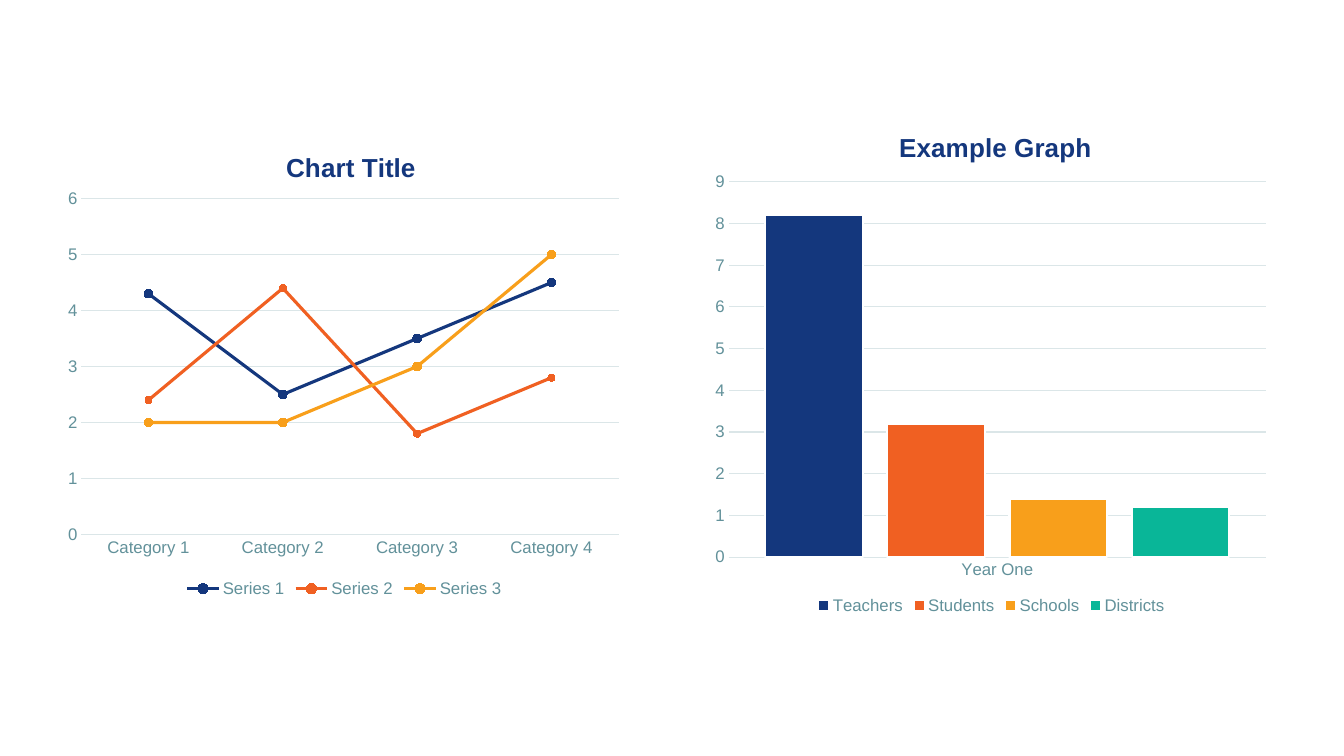
from dataclasses import dataclass

from lxml import etree
from pptx import Presentation
from pptx.chart.data import CategoryChartData
from pptx.dml.color import RGBColor
from pptx.enum.chart import (XL_CHART_TYPE, XL_LEGEND_POSITION,
                             XL_MARKER_STYLE, XL_TICK_MARK)
from pptx.oxml.ns import qn
from pptx.util import Inches, Pt

LINE = XL_CHART_TYPE.LINE_MARKERS
COLUMN = XL_CHART_TYPE.COLUMN_CLUSTERED
BOTTOM = XL_LEGEND_POSITION.BOTTOM
CIRCLE = XL_MARKER_STYLE.CIRCLE
NONE = XL_TICK_MARK.NONE

WIDE, HIGH = Inches(13.33), Inches(7.5)
SPAN = Inches(5.67)  # width of each chart


@dataclass(frozen=True)
class Theme:
    font: str = "Arial"
    title: float = 18.6
    label: float = 12
    navy: str = "14377D"
    muted: str = "62919A"
    grid: str = "DBE6E8"
    white: str = "FFFFFF"
    series: tuple = ("14377D", "F06022", "F89F1B", "09B698")


THEME = Theme()


def rgb(code):
    return RGBColor.from_string(code)


def style_font(font, size, color, bold=False):
    font.name, font.size, font.bold = THEME.font, Pt(size), bold
    font.color.rgb = rgb(color)


def style_line(line, color, width):
    line.color.rgb = rgb(color)
    line.width = Pt(width)


def fill(form, color):
    form.fill.solid()
    form.fill.fore_color.rgb = rgb(color)


def place(parent, index, **marks):
    """Fix a chart part by shares of the chart's size."""
    for old in parent.findall(qn("c:layout")):
        parent.remove(old)
    layout = etree.Element(qn("c:layout"))
    manual = etree.SubElement(layout, qn("c:manualLayout"))
    for tag, value in marks.items():
        etree.SubElement(manual, qn("c:" + tag)).set("val", str(value))
    parent.insert(index, layout)


def style_axes(chart, top):
    cat, val = chart.category_axis, chart.value_axis
    for axis in (cat, val):
        axis.major_tick_mark = axis.minor_tick_mark = NONE
        style_font(axis.tick_labels.font, THEME.label, THEME.muted)
    style_line(cat.format.line, THEME.grid, 0.75)
    val.format.line.fill.background()
    val.has_major_gridlines = True
    style_line(val.major_gridlines.format.line, THEME.grid, 0.75)
    val.minimum_scale, val.maximum_scale, val.major_unit = 0, top, 1


def add_chart(slide, kind, box, title, cats, rows, top, head, plot):
    data = CategoryChartData()
    data.categories = cats
    for name, values in rows.items():
        data.add_series(name, values)
    chart = slide.shapes.add_chart(kind, *box, data).chart
    style_font(chart.font, THEME.label, THEME.muted)

    # Title
    chart.has_title = True
    frame = chart.chart_title.text_frame
    frame.text = title
    style_font(frame.paragraphs[0].font, THEME.title, THEME.navy, True)
    x, y = head
    place(chart.chart_title._element, 1, xMode="edge", yMode="edge", x=x, y=y)

    # Legend, axes and plot area
    chart.has_legend = True
    chart.legend.position = BOTTOM
    chart.legend.include_in_layout = False
    style_font(chart.legend.font, THEME.label, THEME.muted)
    style_axes(chart, top)
    x, y, w, h = plot
    place(chart._chartSpace.chart.plotArea, 0, layoutTarget="inner",
          xMode="edge", yMode="edge", x=x, y=y, w=w, h=h)
    chart.plots[0].vary_by_categories = False
    return chart


def style_lines(chart, sizes):
    for series, color, size in zip(chart.series, THEME.series, sizes):
        series.smooth = False
        style_line(series.format.line, color, 2.25)
        mark = series.marker
        mark.style, mark.size = CIRCLE, size
        fill(mark.format, color)
        style_line(mark.format.line, color, 0.75)


def style_bars(chart):
    plot = chart.plots[0]
    plot.gap_width, plot.overlap = 75, -25
    for series, color in zip(chart.series, THEME.series):
        series.invert_if_negative = False
        fill(series.format, color)
        style_line(series.format.line, THEME.white, 1.5)


def main():
    deck = Presentation()
    deck.slide_width, deck.slide_height = WIDE, HIGH
    slide = deck.slides.add_slide(deck.slide_layouts[6])

    # Left: line chart
    trend = add_chart(
        slide, LINE, (Inches(0.58), Inches(1.21), SPAN, Inches(4.76)),
        "Chart Title", [f"Category {n}" for n in range(1, 5)],
        {"Series 1": (4.3, 2.5, 3.5, 4.5),
         "Series 2": (2.4, 4.4, 1.8, 2.8),
         "Series 3": (2, 2, 3, 5)},
        6, (0.39, 0.05), (0.04, 0.16, 0.94, 0.7))
    style_lines(trend, (6, 5, 6))

    # Right: column chart
    bars = add_chart(
        slide, COLUMN, (Inches(7), Inches(1.04), SPAN, Inches(5.1)),
        "Example Graph", ["Year One"],
        {"Teachers": [8.2], "Students": [3.2],
         "Schools": [1.4], "Districts": [1.2]},
        9, (0.33, 0.04), (0.04, 0.15, 0.94, 0.73))
    style_bars(bars)

    deck.save("out.pptx")


if __name__ == "__main__":
    main()
